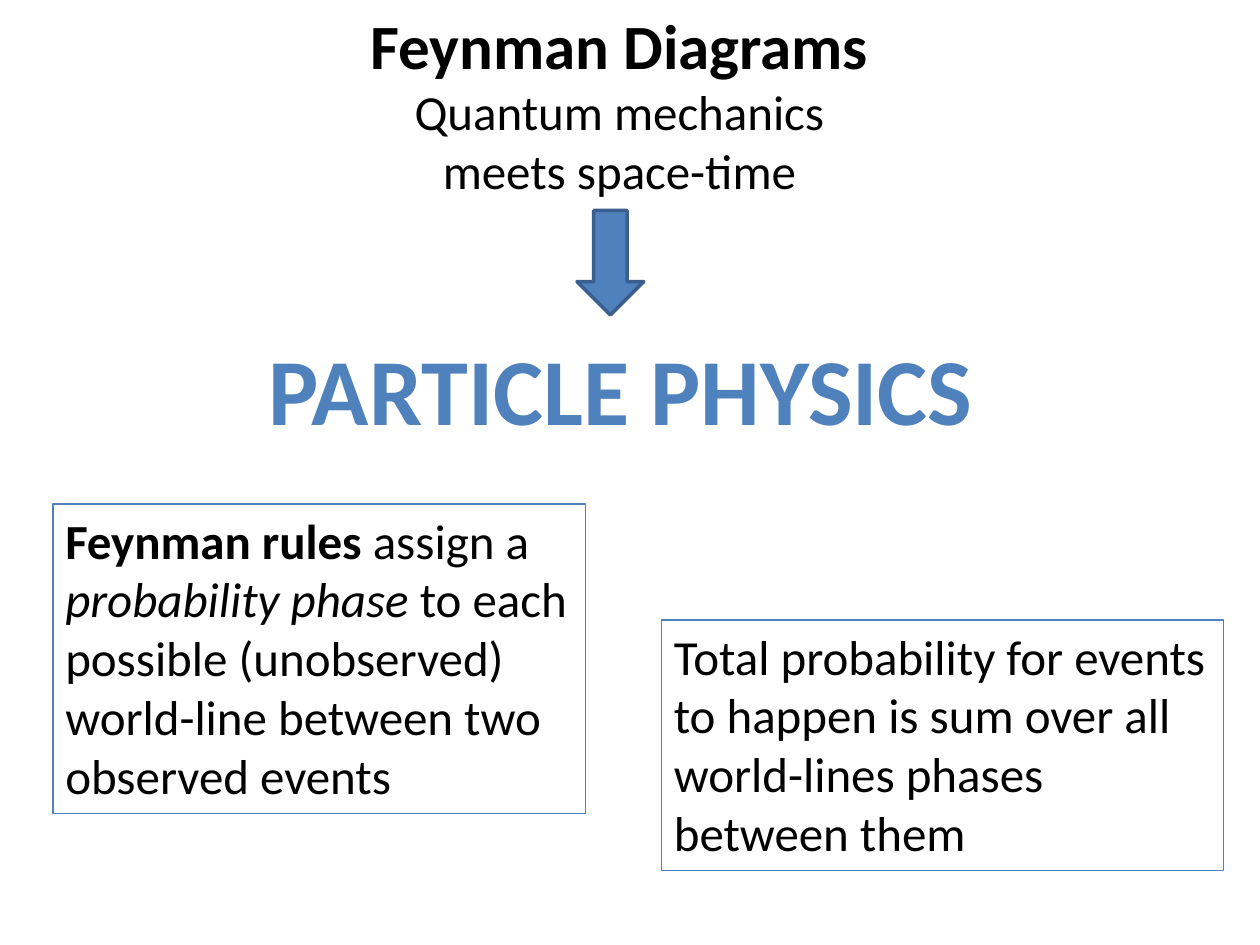
from dataclasses import dataclass

from pptx import Presentation
from pptx.dml.color import RGBColor as RGB
from pptx.enum.shapes import MSO_SHAPE as SHAPE
from pptx.enum.text import MSO_ANCHOR as ANCHOR, PP_ALIGN as ALIGN
from pptx.util import Inches, Pt


@dataclass(frozen=True)
class Theme:
    font: str = "Calibri"
    text: RGB = RGB(0x00, 0x00, 0x00)
    accent: RGB = RGB(0x4F, 0x81, 0xBD)
    arrow_edge: RGB = RGB(0x3A, 0x5F, 0x8C)
    body: int = 28
    title: int = 36
    banner: int = 54


T = Theme()

# Boxes are left, top, width, height in inches.
# Paragraphs are lists of (text, style), where style is "", "b" or "i".
RULES_BOX = (0.42, 4, 4.23, 2.46)
RULES = [
    [("Feynman rules ", "b"), ("assign a", "")],
    [("probability phase ", "i"), ("to each", "")],
    [("possible (unobserved)", "")],
    [("world-line between two", "")],
    [("observed events", "")],
]
TOTAL_BOX = (5.25, 4.92, 4.46, 1.99)
TOTAL = [
    [("Total probability for events", "")],
    [("to happen is sum over all world-lines phases between them", "")],
]
HEADING_BOX = (2.82, 0, 4.19, 3.06)
HEADING = [
    ("Feynman Diagrams", T.title, True),
    ("Quantum mechanics", T.body, False),
    ("meets space-time", T.body, False),
]
ARROW_BOX = (4.58, 1.67, 0.53, 0.83)
BANNER_BOX = (2, 2.58, 5.85, 1.01)
BANNER = "PARTICLE PHYSICS"


def place(box):
    return [Inches(v) for v in box]


def add_paragraphs(tf, count):
    """Return the frame's first paragraph and enough new ones to make count."""
    return [tf.paragraphs[0]] + [tf.add_paragraph() for _ in range(count - 1)]


def set_font(p, size, color, bold=False):
    p.font.name, p.font.size, p.font.bold = T.font, Pt(size), bold
    p.font.color.rgb = color


def add_outlined_text(slide, box, paragraphs, wrap):
    sp = slide.shapes.add_shape(SHAPE.RECTANGLE, *place(box))
    sp.shadow.inherit = False
    sp.fill.background()
    sp.line.color.rgb = T.accent
    sp.line.width = Pt(0.75)
    tf = sp.text_frame
    tf.word_wrap = wrap
    tf.vertical_anchor = ANCHOR.TOP
    for p, runs in zip(add_paragraphs(tf, len(paragraphs)), paragraphs):
        p.alignment = ALIGN.LEFT
        set_font(p, T.body, T.text)
        for text, style in runs:
            r = p.add_run()
            r.text = text
            # Shape style colours text white unless each run sets its own
            r.font.color.rgb = T.text
            if style:
                r.font.bold = style == "b"
                r.font.italic = style == "i"


def add_centred_text(slide, box, lines, color):
    tf = slide.shapes.add_textbox(*place(box)).text_frame
    tf.word_wrap = False
    for p, (text, size, bold) in zip(add_paragraphs(tf, len(lines)), lines):
        p.text = text
        p.alignment = ALIGN.CENTER
        set_font(p, size, color, bold)


def add_arrow(slide):
    sp = slide.shapes.add_shape(SHAPE.DOWN_ARROW, *place(ARROW_BOX))
    sp.shadow.inherit = False
    sp.fill.solid()
    sp.fill.fore_color.rgb = T.accent
    sp.line.color.rgb = T.arrow_edge
    sp.line.width = Pt(2)


def main():
    prs = Presentation()
    prs.slide_width, prs.slide_height = Inches(10), Inches(7.5)
    slide = prs.slides.add_slide(prs.slide_layouts[6])
    add_outlined_text(slide, RULES_BOX, RULES, wrap=False)
    add_centred_text(slide, HEADING_BOX, HEADING, T.text)
    add_outlined_text(slide, TOTAL_BOX, TOTAL, wrap=True)
    add_arrow(slide)
    add_centred_text(slide, BANNER_BOX, [(BANNER, T.banner, True)], T.accent)
    prs.save("out.pptx")


if __name__ == "__main__":
    main()
